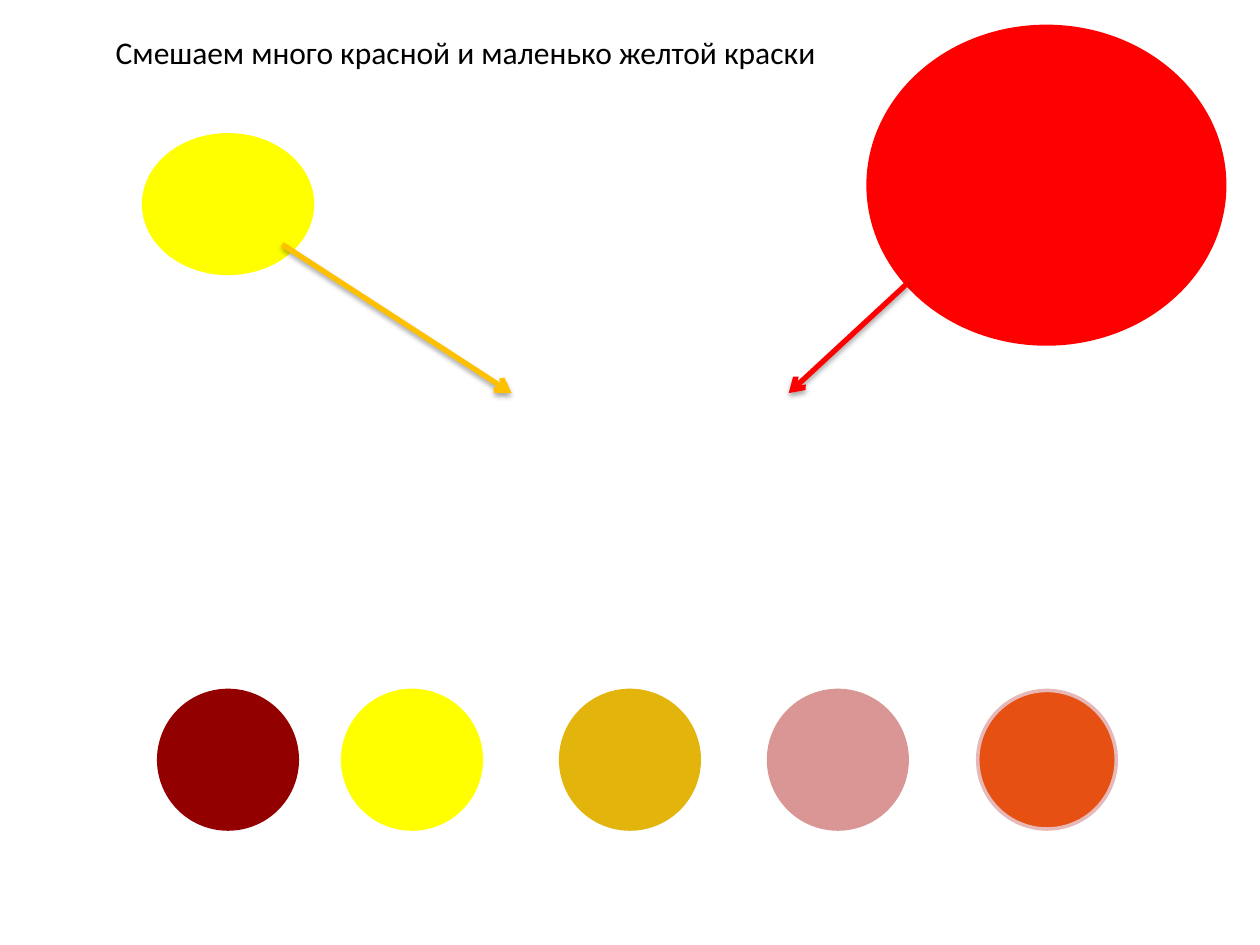
from lxml import etree
from pptx import Presentation, util as u
from pptx.dml.color import RGBColor
from pptx.enum import shapes, text
from pptx.oxml import parse_xml
from pptx.oxml.ns import nsdecls, qn

YELLOW, RED, BLACK = "FFFF00", "FF0000", "000000"


def rgb(code):
    return RGBColor.from_string(code)


class Painter:
    font = {"name": "Calibri", "size": u.Pt(18)}
    frame = {"word_wrap": False, "auto_size": text.MSO_AUTO_SIZE.SHAPE_TO_FIT_TEXT}
    shadow = (
        f'<a:effectLst {nsdecls("a")}><a:outerShdw blurRad="{u.Pt(3.1)}" '
        f'dist="{u.Pt(1.8)}" dir="5400000" rotWithShape="0"><a:srgbClr val="{BLACK}">'
        '<a:alpha val="35000"/></a:srgbClr></a:outerShdw></a:effectLst>'
    )

    def __init__(self, slide):
        self.slide = slide

    def stroke(self, line, color, width):
        line.color.rgb = rgb(color)
        line.width = u.Pt(width)

    def paint(self, left, top, width, height, fill, edge=None):
        box = map(u.Inches, (left, top, width, height))
        oval = self.slide.shapes.add_shape(shapes.MSO_SHAPE.OVAL, *box)
        oval.shadow.inherit = False
        oval.fill.solid()
        oval.fill.fore_color.rgb = rgb(fill)
        self.stroke(oval.line, edge or fill, 2)

    def arrow(self, start, end, color):
        ends = map(u.Inches, (*start, *end))
        link = self.slide.shapes.add_connector(shapes.MSO_CONNECTOR.STRAIGHT, *ends)
        self.stroke(link.line, color, 3)
        props = link._element.spPr
        etree.SubElement(props.find(qn("a:ln")), qn("a:tailEnd"), type="arrow")
        props.append(parse_xml(self.shadow))

    def label(self, left, top, width, height, words):
        box = map(u.Inches, (left, top, width, height))
        frame = self.slide.shapes.add_textbox(*box).text_frame
        for key, value in self.frame.items():
            setattr(frame, key, value)
        run = frame.paragraphs[0].add_run()
        run.text = words
        for key, value in self.font.items():
            setattr(run.font, key, value)
        run.font.color.rgb = rgb(BLACK)


def main():
    deck = Presentation()
    deck.slide_width, deck.slide_height = u.Inches(10), u.Inches(7.5)
    art = Painter(deck.slides.add_slide(deck.slide_layouts[6]))

    # Paints to mix
    art.paint(1.14, 1.07, 1.34, 1.1, YELLOW)
    art.paint(6.89, 0.21, 2.83, 2.52, RED)

    # Arrows towards the mixture
    art.arrow((2.24, 1.94), (4.06, 3.12), "FFC000")
    art.arrow((7.2, 2.25), (6.26, 3.12), RED)

    # Row of possible answers
    size, top = 1.1, 5.48
    answers = [
        (1.26, "920000", None),
        (2.72, YELLOW, None),
        (4.45, "E2B40C", None),
        (6.1, "D99694", None),
        (7.76, "E75013", "E6B9B8"),
    ]
    for left, fill, edge in answers:
        art.paint(left, top, size, size, fill, edge)

    # Task
    art.label(0.82, 0.21, 5.82, 0.4, "Смешаем много красной и маленько желтой краски")

    deck.save("out.pptx")


if __name__ == "__main__":
    main()
